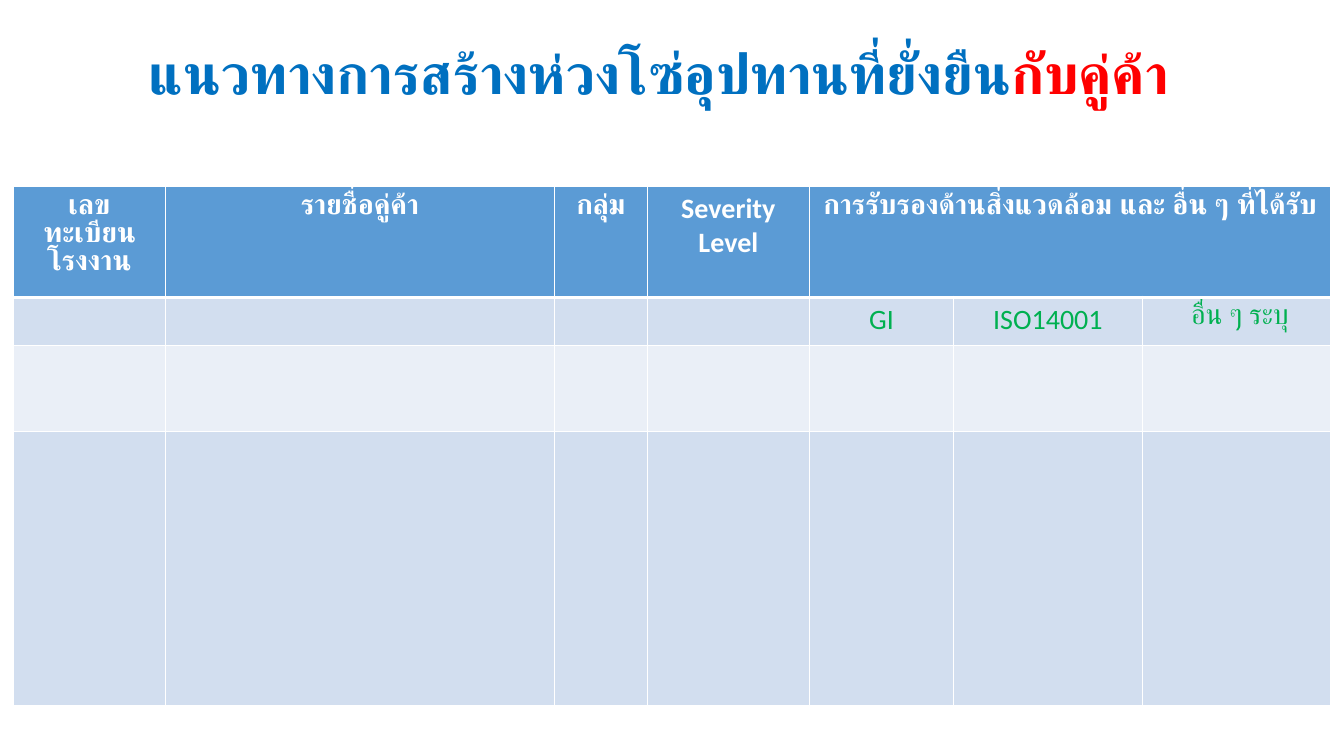
from dataclasses import dataclass

from lxml.etree import SubElement
from pptx import Presentation
from pptx.dml.color import RGBColor
from pptx.enum.text import MSO_ANCHOR, PP_ALIGN
from pptx.oxml.ns import qn
from pptx.util import Inches, Pt


@dataclass(frozen=True)
class Theme:
    title_font: str = "Arial"
    table_font: str = "Calibri"
    title_size: int = 40
    table_size: int = 20
    blue: str = "0070C0"
    red: str = "FF0000"
    green: str = "00B050"
    white: str = "FFFFFF"
    header_fill: str = "5B9BD5"
    dark_band: str = "D2DEEF"
    light_band: str = "EAEFF7"
    border: int = 1
    header_border: int = 3


THEME = Theme()

TITLE_PARTS = [
    ("แนวทางการสร้างห่วงโซ่อุปทานที่ยั่งยืน", THEME.blue),
    ("กับคู่ค้า", THEME.red),
]
HEADERS = [
    "เลขทะเบียนโรงงาน",
    "รายชื่อคู่ค้า",
    "กลุ่ม",
    "Severity Level",
    "การรับรองด้านสิ่งแวดล้อม และ อื่น ๆ ที่ได้รับ",
]
CERTIFICATES = ["GI", "ISO14001", " อื่น ๆ ระบุ"]
FIRST_CERTIFICATE = len(HEADERS) - 1
COLUMN_WIDTHS = [1.51, 3.86, 0.92, 1.61, 1.43, 1.87, 1.87]
ROW_HEIGHTS = [0.91, 0.48, 0.85, 2.72]


def add_title(slide, parts):
    shape = slide.shapes.add_textbox(Inches(0), Inches(0.25), Inches(13.07), Inches(1.01))
    frame = shape.text_frame
    frame.word_wrap = True
    frame.vertical_anchor = MSO_ANCHOR.MIDDLE
    paragraph = frame.paragraphs[0]
    paragraph.alignment = PP_ALIGN.CENTER
    paragraph.line_spacing = 0.9
    paragraph.font.name = THEME.title_font
    paragraph.font.size = Pt(THEME.title_size)
    paragraph.font.bold = True
    for text, color in parts:
        run = paragraph.add_run()
        run.text = text
        run.font.color.rgb = RGBColor.from_string(color)


def set_borders(cell, top, bottom):
    properties = cell._tc.get_or_add_tcPr()
    widths = {"a:lnL": THEME.border, "a:lnR": THEME.border, "a:lnT": top, "a:lnB": bottom}
    for tag, width in widths.items():
        line = SubElement(properties, qn(tag), w=str(Pt(width)))
        fill = SubElement(line, qn("a:solidFill"))
        SubElement(fill, qn("a:srgbClr"), val=THEME.white)


def style_cell(cell, row):
    # Borders come before the fill in the cell properties
    top = THEME.header_border if row == 1 else THEME.border
    bottom = THEME.header_border if row == 0 else THEME.border
    set_borders(cell, top, bottom)
    band = THEME.dark_band if row % 2 else THEME.light_band
    cell.fill.solid()
    cell.fill.fore_color.rgb = RGBColor.from_string(band if row else THEME.header_fill)


def write_cell(cell, text, color, bold):
    cell.text = text
    paragraph = cell.text_frame.paragraphs[0]
    paragraph.alignment = PP_ALIGN.CENTER
    paragraph.font.name = THEME.table_font
    paragraph.font.size = Pt(THEME.table_size)
    paragraph.font.bold = bold
    paragraph.font.color.rgb = RGBColor.from_string(color)


def add_partner_table(slide):
    frame = slide.shapes.add_table(
        len(ROW_HEIGHTS), len(COLUMN_WIDTHS),
        Inches(0.13), Inches(1.85), Inches(13.07), Inches(4.96),
    )
    table = frame.table
    for column, width in zip(table.columns, COLUMN_WIDTHS):
        column.width = Inches(width)
    for row, height in zip(table.rows, ROW_HEIGHTS):
        row.height = Inches(height)
    for row_index, row in enumerate(table.rows):
        for cell in row.cells:
            style_cell(cell, row_index)

    # The last heading spans the certificate columns
    table.cell(0, FIRST_CERTIFICATE).merge(table.cell(0, len(COLUMN_WIDTHS) - 1))
    for column, text in enumerate(HEADERS):
        write_cell(table.cell(0, column), text, THEME.white, True)
    for column, text in enumerate(CERTIFICATES, FIRST_CERTIFICATE):
        write_cell(table.cell(1, column), text, THEME.green, False)


def main():
    presentation = Presentation()
    presentation.slide_width = Inches(13.33)
    presentation.slide_height = Inches(7.5)
    slide = presentation.slides.add_slide(presentation.slide_layouts[6])
    add_title(slide, TITLE_PARTS)
    add_partner_table(slide)
    presentation.save("out.pptx")


if __name__ == "__main__":
    main()
